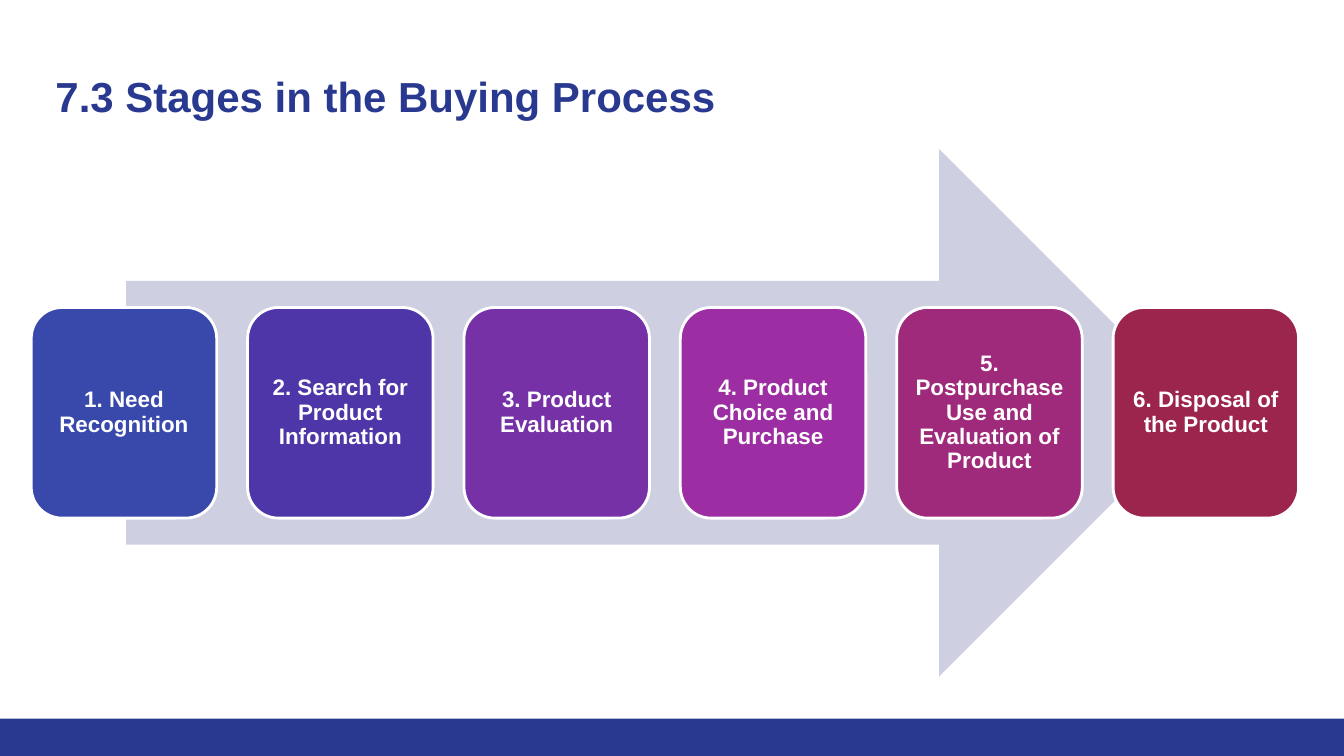
from dataclasses import dataclass

from pptx import Presentation
from pptx.dml.color import RGBColor as RGB
from pptx.enum.shapes import MSO_SHAPE as Shape
from pptx.enum.text import MSO_ANCHOR as Anchor, MSO_AUTO_SIZE as Fit, PP_ALIGN as Align
from pptx.util import Inches, Pt


@dataclass(frozen=True)
class Theme:
    font: str = "Arial"
    navy: str = "2A3990"
    pale: str = "CED0E2"
    white: str = "FFFFFF"
    head: int = 30
    body: int = 16
    edge: int = 2


class Deck:
    def __init__(self, theme):
        self.theme = theme
        self.prs = Presentation()
        self.prs.slide_width = Inches(13.33)
        self.prs.slide_height = Inches(7.5)
        self.slide = self.prs.slides.add_slide(self.prs.slide_layouts[5])

    def label(self, shape, text, size, color, align, anchor, inset):
        frame = shape.text_frame
        frame.text = text
        frame.word_wrap = True
        frame.auto_size = Fit.NONE
        frame.vertical_anchor = anchor
        frame.margin_left = frame.margin_right = Inches(inset)
        frame.margin_top = frame.margin_bottom = Inches(inset)
        para = frame.paragraphs[0]
        para.alignment = align
        font = para.runs[0].font
        font.name, font.size, font.bold = self.theme.font, Pt(size), True
        font.color.rgb = RGB.from_string(color)
        return para

    def title(self, text, left, top, width, height):
        box = self.slide.shapes.title
        box.left, box.top = Inches(left), Inches(top)
        box.width, box.height = Inches(width), Inches(height)
        self.label(box, text, self.theme.head, self.theme.navy,
                   Align.LEFT, Anchor.TOP, 0.1)

    def block(self, kind, fill, left, top, width, height):
        shape = self.slide.shapes.add_shape(
            kind, Inches(left), Inches(top), Inches(width), Inches(height))
        shape.shadow.inherit = False
        shape.fill.solid()
        shape.fill.fore_color.rgb = RGB.from_string(fill)
        shape.line.fill.background()
        return shape

    def card(self, text, fill, left, top, width, height):
        shape = self.block(Shape.ROUNDED_RECTANGLE, fill, left, top, width, height)
        shape.line.color.rgb = RGB.from_string(self.theme.white)
        shape.line.width = Pt(self.theme.edge)
        para = self.label(shape, text, self.theme.body, self.theme.white,
                          Align.CENTER, Anchor.MIDDLE, 0.07)
        para.line_spacing = 0.9


STAGES = [
    ("1. Need Recognition", "3949AB"),
    ("2. Search for Product Information", "4E35A8"),
    ("3. Product Evaluation", "7531A5"),
    ("4. Product Choice and Purchase", "9C2DA2"),
    ("5. Postpurchase Use and Evaluation of Product", "9F297B"),
    ("6. Disposal of the Product", "9C254D"),
]


def main():
    theme = Theme()
    deck = Deck(theme)

    # Footer band and title
    deck.block(Shape.RECTANGLE, theme.navy, 0, 7.13, 13.33, 0.37)
    deck.title("7.3 Stages in the Buying Process", 0.45, 0.6, 12.42, 0.89)

    # Arrow behind the stages
    deck.block(Shape.RIGHT_ARROW, theme.pale, 1.25, 1.48, 10.68, 5.23)

    # Stage cards, evenly spaced from the first to the last
    first, last = 0.31, 11.04
    step = (last - first) / (len(STAGES) - 1)
    for i, (text, fill) in enumerate(STAGES):
        deck.card(text, fill, first + i * step, 3.05, 1.84, 2.09)

    deck.prs.save("out.pptx")


if __name__ == "__main__":
    main()
